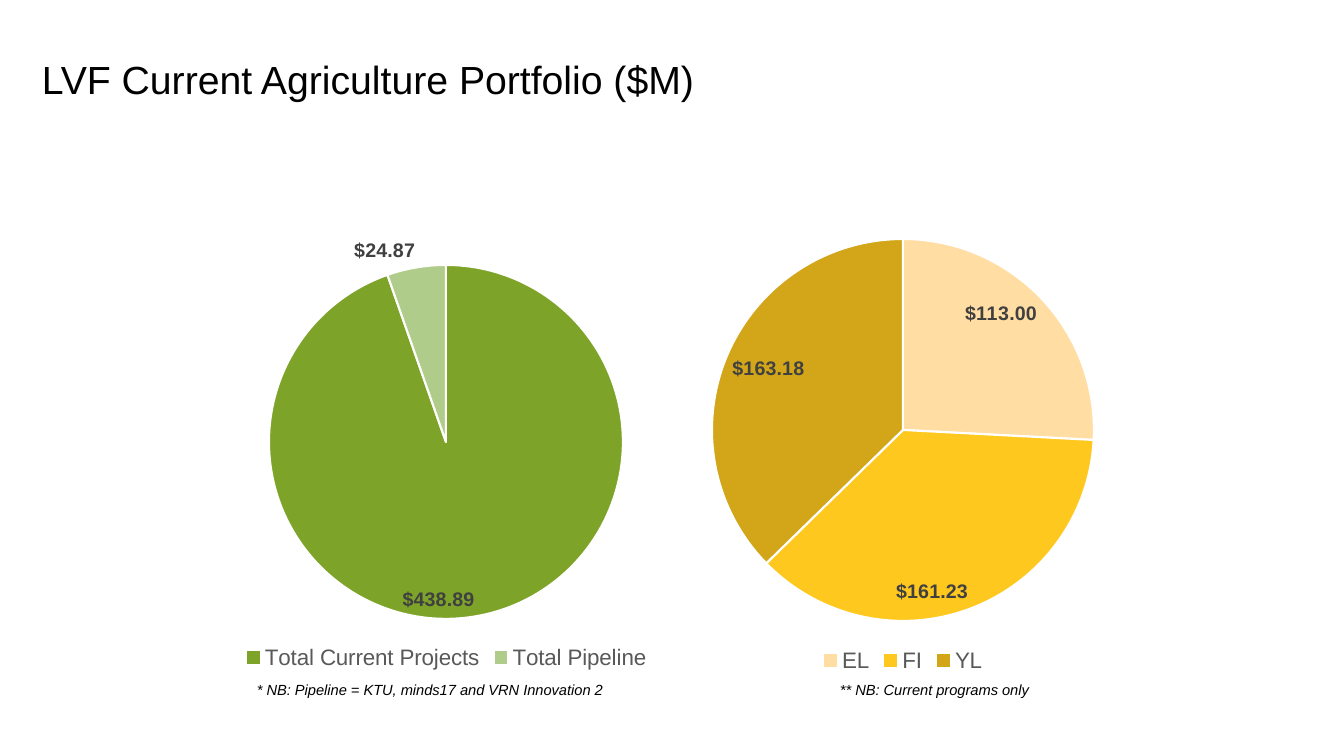
from lxml import etree
from pptx import Presentation
from pptx.chart.data import CategoryChartData
from pptx.dml.color import RGBColor
from pptx.enum.chart import XL_CHART_TYPE, XL_LABEL_POSITION, XL_LEGEND_POSITION
from pptx.enum.text import MSO_ANCHOR
from pptx.oxml.ns import qn
from pptx.util import Emu, Pt

PIE = XL_CHART_TYPE.PIE
BOTTOM = XL_LEGEND_POSITION.BOTTOM
IN_END, OUT_END = XL_LABEL_POSITION.INSIDE_END, XL_LABEL_POSITION.OUTSIDE_END
MIDDLE = MSO_ANCHOR.MIDDLE

# Content; boxes are left, top, width, height in px
FONT = "Arial"
MONEY = '"$"#,##0.00'
COLORS = {
    "text": "000000", "label": "404040", "legend": "595959", "edge": "FFFFFF",
    "green": "7DA429", "light green": "B0CC8A",
    "peach": "FFDDA3", "yellow": "FFC81F", "gold": "D3A61A",
}
TITLE = ("LVF Current Agriculture Portfolio ($M)", (42, 29, 1260, 99))
NOTES = [
    ("* NB: Pipeline = KTU, minds17 and VRN Innovation 2", (247, 676, 423, 29)),
    ("** NB: Current programs only", (830, 676, 423, 29)),
]
# Slices: name, value, colour, label position
PIES = [
    {"box": (122, 224, 649, 450), "center": (446, 442), "radius": 177,
     "slices": [("Total Current Projects", 438.89, "green", IN_END),
                ("Total Pipeline", 24.87, "light green", OUT_END)]},
    {"box": (651, 225, 504, 452), "center": (903, 430), "radius": 191,
     "slices": [("EL", 113, "peach", IN_END),
                ("FI", 161.23, "yellow", IN_END),
                ("YL", 163.18, "gold", IN_END)]},
]


def px(n):
    return Emu(round(n * 914400 / 100.8))


def rgb(name):
    return RGBColor.from_string(COLORS[name])


def style(font, size, color, bold=False, italic=False):
    font.name, font.size = FONT, Pt(size)
    font.bold, font.italic = bold, italic
    font.color.rgb = rgb(color)


def add_text(slide, text, box, size, italic=False):
    tf = slide.shapes.add_textbox(*map(px, box)).text_frame
    tf.word_wrap = True
    r = tf.paragraphs[0].add_run()
    r.text = text
    style(r.font, size, "text", italic=italic)
    return tf


def place_plot(chart, box, center, radius):
    """Fix the pie's square inside the chart frame."""
    left, top, width, height = box
    area = chart._chartSpace.find(".//" + qn("c:plotArea"))
    for old in area.findall(qn("c:layout")):
        area.remove(old)
    layout = etree.Element(qn("c:layout"))
    manual = etree.SubElement(layout, qn("c:manualLayout"))
    settings = [
        ("layoutTarget", "inner"), ("xMode", "edge"), ("yMode", "edge"),
        ("x", (center[0] - radius - left) / width),
        ("y", (center[1] - radius - top) / height),
        ("w", 2 * radius / width), ("h", 2 * radius / height),
    ]
    for tag, val in settings:
        etree.SubElement(manual, qn("c:" + tag)).set("val", str(val))
    area.insert(0, layout)


def add_pie(slide, box, center, radius, slices):
    data = CategoryChartData(number_format=MONEY)
    data.categories = [s[0] for s in slices]
    data.add_series("Series 1", [s[1] for s in slices])
    chart = slide.shapes.add_chart(PIE, *map(px, box), data).chart
    chart.has_title = False
    style(chart.font, 10, "text")
    chart.has_legend = True
    chart.legend.position = BOTTOM
    chart.legend.include_in_layout = False
    style(chart.legend.font, 16, "legend")

    plot = chart.plots[0]
    plot.vary_by_categories = True
    series = plot.series[0]
    labels = series.data_labels
    labels.show_value = True
    labels.number_format = MONEY
    labels.number_format_is_linked = False
    style(labels.font, 14, "label", bold=True)
    for i, (_, _, color, position) in enumerate(slices):
        point = series.points[i]
        point.format.fill.solid()
        point.format.fill.fore_color.rgb = rgb(color)
        point.format.line.color.rgb = rgb("edge")
        point.format.line.width = Pt(1.5)
        style(point.data_label.font, 14, "label", bold=True)
        point.data_label.position = position
    place_plot(chart, box, center, radius)


prs = Presentation()
prs.slide_width, prs.slide_height = px(1344), px(756)
slide = prs.slides.add_slide(prs.slide_layouts[6])

# Title
tf = add_text(slide, *TITLE, 28)
tf.vertical_anchor = MIDDLE
tf.margin_left = tf.margin_right = tf.margin_top = tf.margin_bottom = 0

# Pies
for pie in PIES:
    add_pie(slide, **pie)

# Footnotes
for text, box in NOTES:
    add_text(slide, text, box, 10.5, italic=True)

prs.save("out.pptx")
